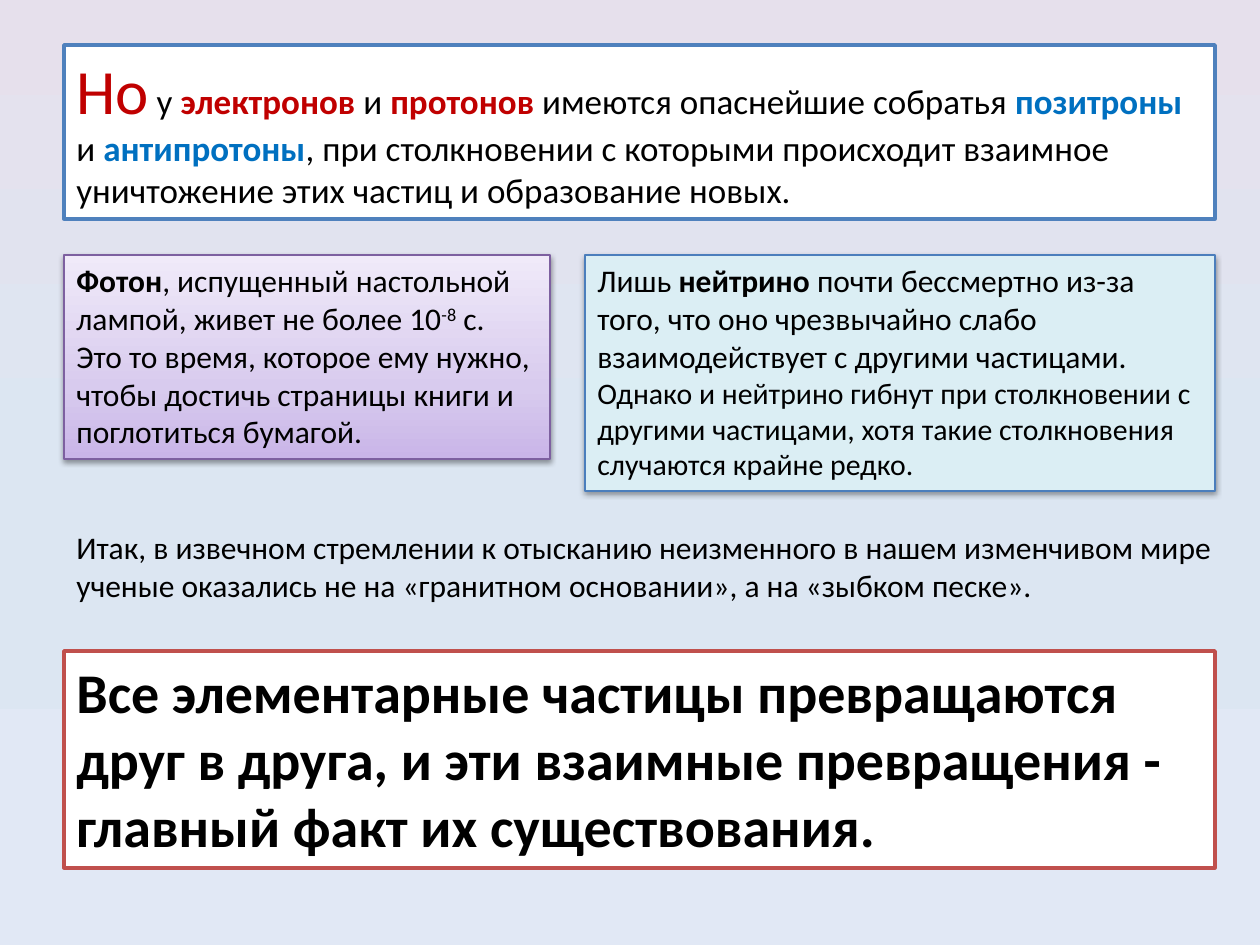
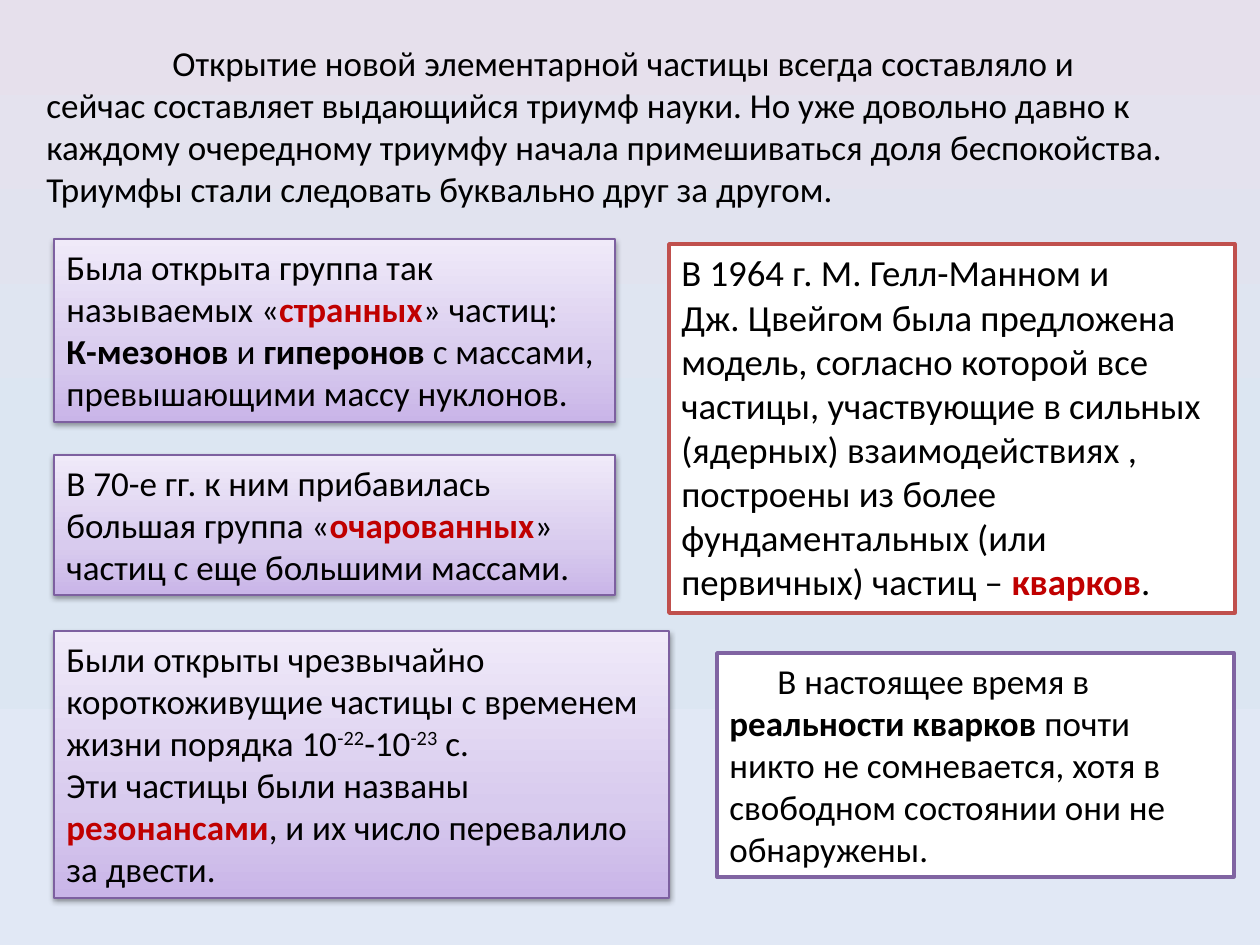
import lxml.etree
import pptx
import pptx.util
import pptx.dml.color
import pptx.enum.shapes
import pptx.enum.text
import pptx.oxml.ns

FONT = "Calibri"
COLOR = {
    "black": "000000", "white": "FFFFFF", "red": "C00000", "blue": "0070C0",
    "ice": "DBEEF4", "azure": "4F81BD", "steel": "4B7EBC",
    "brick": "C0504D", "violet": "8064A2", "plum": "7D60A0",
}
SKY = [(0, "E6E0EC"), (50, "DCE6F2"), (100, "E1E8F5")]
LILAC = [(0, "F0EAF9"), (65, "D8CBEE"), (100, "C9B5E8")]
# Run styles: colour, bold, superscript, own size
STYLE = {
    "plain": ("black", False, False, None),
    "bold": ("black", True, False, None),
    "red": ("red", True, False, None),
    "blue": ("blue", True, False, None),
    "sup": ("black", False, True, None),
    "lead": ("red", False, False, 36),
    "small": ("black", False, False, 17),
}


def px(n):
    return pptx.util.Emu(round(n * 914400 / 126))


def rgb(name):
    return pptx.dml.color.RGBColor.from_string(COLOR[name])


def add_node(parent, tag, **attrs):
    node = lxml.etree.SubElement(parent, pptx.oxml.ns.qn(tag))
    for key, value in attrs.items():
        node.set(key, str(value))
    return node


def shade(fill, element, stops):
    """Fill with a gradient that runs from top to bottom."""
    fill.gradient()
    fill.gradient_angle = 270
    stop_list = next(element.iter(pptx.oxml.ns.qn("a:gsLst")))
    for old in list(stop_list):
        stop_list.remove(old)
    for place, color in stops:
        stop = add_node(stop_list, "a:gs", pos=place * 1000)
        add_node(stop, "a:srgbClr", val=color)


def cast_shadow(shape):
    effects = shape.element.spPr.find(pptx.oxml.ns.qn("a:effectLst"))
    outer = add_node(effects, "a:outerShdw", blurRad=40000, dist=20000,
                     dir=5400000, rotWithShape=0)
    color = add_node(outer, "a:srgbClr", val=COLOR["black"])
    add_node(color, "a:alpha", val=38000)


def write(shape, paras, size, indent=0):
    """Each paragraph is a list of plain strings, (text, style) pairs and line breaks."""
    frame = shape.text_frame
    frame.word_wrap = True
    frame.auto_size = pptx.enum.text.MSO_AUTO_SIZE.SHAPE_TO_FIT_TEXT
    frame.vertical_anchor = pptx.enum.text.MSO_ANCHOR.TOP
    for i, parts in enumerate(paras):
        para = frame.add_paragraph() if i else frame.paragraphs[0]
        para.alignment = pptx.enum.text.PP_ALIGN.LEFT
        if indent:
            para._p.get_or_add_pPr().set("indent", str(px(indent)))
        for part in parts:
            if part == "\n":
                para.add_line_break()
                continue
            text, style = (part, "plain") if isinstance(part, str) else part
            color, bold, raised, own_size = STYLE[style]
            run = para.add_run()
            run.text = text
            run.font.name = FONT
            run.font.size = pptx.util.Pt(own_size or size)
            run.font.bold = bold
            run.font.color.rgb = rgb(color)
            if raised:
                run.font._element.set("baseline", "30000")


def add_text(slide, box, paras, size, indent=0):
    shape = slide.shapes.add_textbox(*map(px, box))
    write(shape, paras, size, indent)


def add_panel(slide, box, paras, size, line, fill="white", width=2, indent=0):
    shape = slide.shapes.add_shape(
        pptx.enum.shapes.MSO_SHAPE.RECTANGLE, *map(px, box))
    shape.shadow.inherit = False
    if fill == "lilac":
        shade(shape.fill, shape.element, LILAC)
    else:
        shape.fill.solid()
        shape.fill.fore_color.rgb = rgb(fill)
    shape.line.color.rgb = rgb(line)
    shape.line.width = pptx.util.Pt(width)
    write(shape, paras, size, indent)
    return shape


def add_card(slide, box, paras, size, line="plum", fill="lilac"):
    """A thin-lined panel with a shadow."""
    cast_shadow(add_panel(slide, box, paras, size, line, fill, 0.75))


def draw_change(slide, box):
    """How particles perish and turn into one another."""
    x, y, w, h = box
    row = y + 210
    add_panel(slide, (x, y, w, 174), [[
        ("Но", "lead"), " у ", ("электронов ", "red"), "и ",
        ("протонов ", "red"), "имеются опаснейшие собратья ",
        ("позитроны", "blue"), " и ", ("антипротоны", "blue"),
        ", при столкновении с которыми происходит взаимное уничтожение "
        "этих частиц и образование новых."]], 20, "azure")
    add_card(slide, (x, row, 486, 204), [
        [("Фотон", "bold"), ", испущенный настольной лампой, живет не более 10",
         ("-8", "sup"), " с."],
        ["Это то время, которое ему нужно, чтобы достичь страницы книги "
         "и поглотиться бумагой."]], 18)
    add_card(slide, (x + w - 630, row, 630, 236), [[
        "Лишь ", ("нейтрино", "bold"),
        " почти бессмертно из-за того, что оно чрезвычайно слабо "
        "взаимодействует с другими частицами. ",
        ("Однако и нейтрино гибнут при столкновении с другими частицами, "
         "хотя такие столкновения случаются крайне редко.", "small")]],
        18, "steel", "ice")
    add_text(slide, (x, y + 477, w + 11, 89), [[
        "Итак, в извечном стремлении к отысканию неизменного в нашем "
        "изменчивом мире ученые оказались не на «гранитном основании», "
        "а на «зыбком песке»."]], 18)
    add_panel(slide, (x, y + h - 217, w, 217), [[
        ("Все элементарные частицы превращаются друг в друга, и эти взаимные "
         "превращения - главный факт их существования.", "bold")]], 32, "brick")


def draw_quarks(slide, box):
    """New particles on the left, the quark model on the right."""
    x, y, w, h = box
    right = x + w
    add_text(slide, (x - 20, y, w - 20, 183), [[
        "Открытие новой элементарной частицы всегда составляло и сейчас "
        "составляет выдающийся триумф науки. Но уже довольно давно к каждому "
        "очередному триумфу начала примешиваться доля беспокойства. Триумфы "
        "стали следовать буквально друг за другом."]], 20, indent=126)
    add_card(slide, (x, y + 204, 561, 183), [
        ["Была открыта группа так называемых «", ("странных", "red"),
         "» частиц:"],
        [("К-мезонов ", "bold"), "и ", ("гиперонов", "bold"),
         " с массами, превышающими массу нуклонов."]], 20)
    add_card(slide, (x, y + 420, 561, 140), [[
        "В 70-е гг. к ним прибавилась большая группа «",
        ("очарованных", "red"), "» частиц с еще большими массами."]], 20)
    add_card(slide, (x, y + h - 267, 615, 267), [
        ["Были открыты чрезвычайно короткоживущие частицы с временем жизни "
         "порядка 10", ("-22", "sup"), "-10", ("-23", "sup"), " с."],
        ["Эти частицы были названы ", ("резонансами", "red"),
         ", и их число перевалило за двести."]], 20)
    add_panel(slide, (right - 565, y + 209, 566, 369), [[
        "В 1964 г. М. Гелл-Манном и", "\n",
        "Дж. Цвейгом была предложена модель, согласно которой все частицы, "
        "участвующие в сильных (ядерных) взаимодействиях , построены из более "
        "фундаментальных (или первичных) частиц – ",
        ("кварков", "red"), "."]], 21, "brick")
    add_panel(slide, (right - 517, y + 618, 517, 224), [[
        "В настоящее время в ", ("реальности кварков ", "bold"),
        "почти никто не сомневается, хотя в свободном состоянии они "
        "не обнаружены."]], 20, "violet", indent=48)


def main():
    deck = pptx.Presentation()
    deck.slide_width, deck.slide_height = px(1260), px(945)
    master = deck.slide_master
    shade(master.background.fill, master.element, SKY)
    blank = deck.slide_layouts[6]
    draw_change(deck.slides.add_slide(blank), (64, 45, 1151, 823))
    draw_quarks(deck.slides.add_slide(blank), (54, 35, 1180, 863))
    deck.save("out.pptx")


if __name__ == "__main__":
    main()
